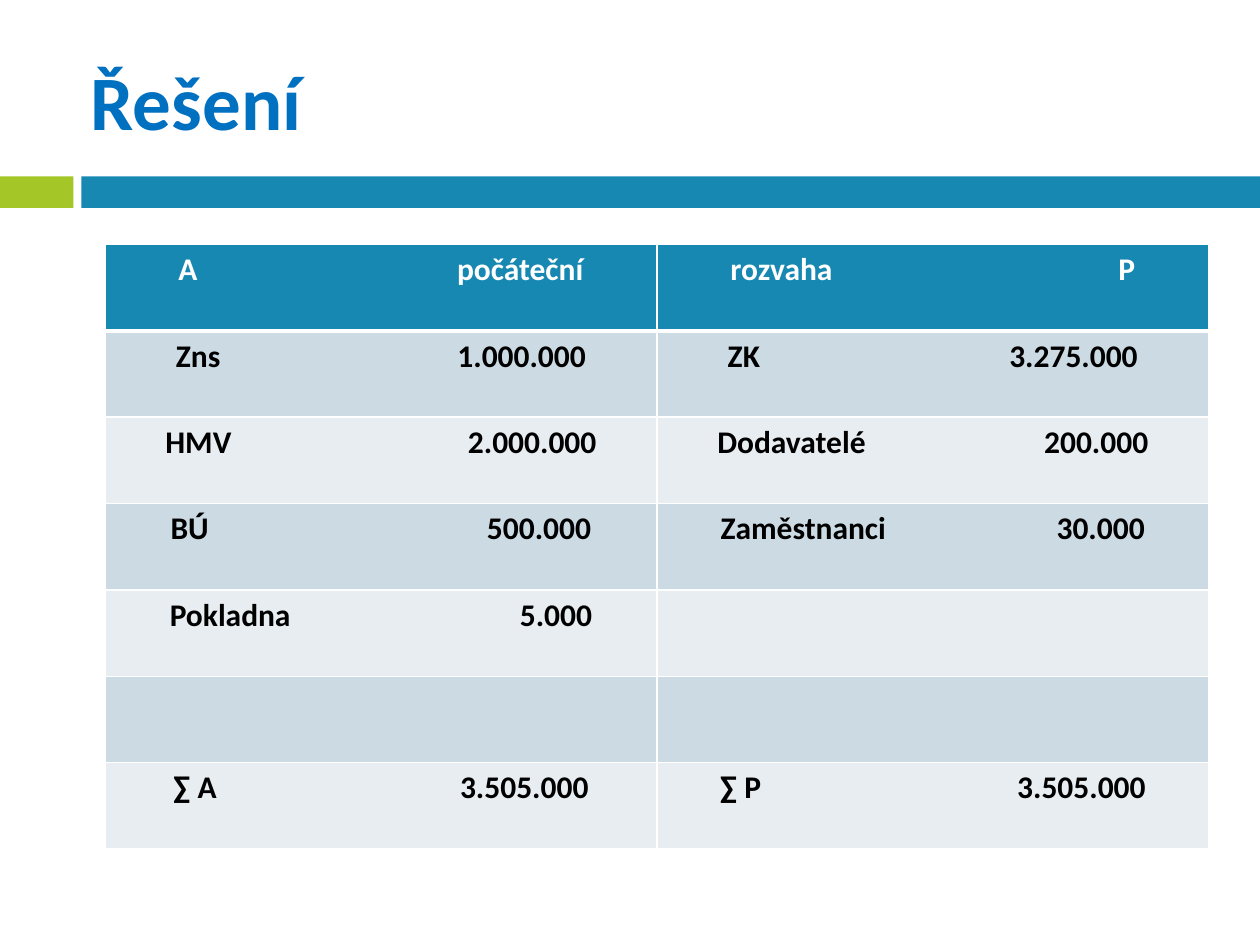
import pptx
import pptx.dml.color
import pptx.enum.shapes
import pptx.enum.text
import pptx.oxml
import pptx.oxml.ns
import pptx.util

Pt = pptx.util.Pt

COLORS = {
    "title": "0070C0",
    "green": "A4C626",
    "blue": "1688B1",
    "band_dark": "CCDAE4",
    "band_light": "E8EDF2",
    "white": "FFFFFF",
    "black": "000000",
}
FONT = "Calibri"
COLUMN_WIDTH = 315.36
TABLE_HEIGHT = 345.6

# Each cell: label, value, distance of both from the cell's sides in points
BALANCE = [
    [("A", "počáteční", 42), ("rozvaha", "P", 42)],
    [("Zns", "1.000.000", 40.5), ("ZK", "3.275.000", 40.5)],
    [("HMV", "2.000.000", 34.5), ("Dodavatelé", "200.000", 34.5)],
    [("BÚ", "500.000", 37.5), ("Zaměstnanci", "30.000", 36.5)],
    [("Pokladna", "5.000", 37), None],
    [None, None],
    [("∑ A", "3.505.000", 39), ("∑ P", "3.505.000", 36)],
]


def rgb(name):
    return pptx.dml.color.RGBColor.from_string(COLORS[name])


def write_text(text_frame, text, size=18, color="black", bold=True):
    paragraph = text_frame.paragraphs[0]
    run = paragraph.add_run()
    run.text = text
    run.font.name = FONT
    run.font.size = Pt(size)
    run.font.bold = bold
    run.font.color.rgb = rgb(color)
    return paragraph


def add_bar(slide, left, width, color):
    shape = slide.shapes.add_shape(
        pptx.enum.shapes.MSO_SHAPE.RECTANGLE, Pt(left), Pt(100.8), Pt(width), Pt(18))
    shape.shadow.inherit = False
    shape.fill.solid()
    shape.fill.fore_color.rgb = rgb(color)
    shape.line.fill.background()


def add_title(slide, text):
    box = slide.shapes.add_textbox(Pt(48.24), Pt(18), Pt(642.24), Pt(77.76))
    frame = box.text_frame
    frame.word_wrap = True
    frame.vertical_anchor = pptx.enum.text.MSO_ANCHOR.MIDDLE
    frame.margin_left = frame.margin_right = Pt(3.6)
    write_text(frame, text, size=44, color="title")


def add_right_tab(paragraph, position):
    namespace = pptx.oxml.ns.nsdecls("a")
    properties = paragraph._p.get_or_add_pPr()
    properties.append(pptx.oxml.parse_xml(
        f'<a:tabLst {namespace}><a:tab pos="{Pt(position)}" algn="r"/></a:tabLst>'))


def set_borders(cell, top=1, bottom=1):
    namespace = pptx.oxml.ns.nsdecls("a")
    properties = cell._tc.get_or_add_tcPr()
    widths = {"lnL": 1, "lnR": 1, "lnT": top, "lnB": bottom}
    for index, (side, width) in enumerate(widths.items()):
        properties.insert(index, pptx.oxml.parse_xml(
            f'<a:{side} {namespace} w="{Pt(width)}"><a:solidFill>'
            f'<a:srgbClr val="{COLORS["white"]}"/></a:solidFill></a:{side}>'))


def fill_cell(cell, entry, fill, color):
    cell.fill.solid()
    cell.fill.fore_color.rgb = rgb(fill)
    if entry:
        label, value, inset = entry
        cell.margin_left = Pt(inset)
        paragraph = write_text(cell.text_frame, f"{label}\t{value}", color=color)
        add_right_tab(paragraph, COLUMN_WIDTH - 2 * inset)


def add_balance_table(slide):
    table = slide.shapes.add_table(
        len(BALANCE), 2, Pt(60), Pt(139.68), Pt(2 * COLUMN_WIDTH), Pt(TABLE_HEIGHT)).table
    for column in table.columns:
        column.width = Pt(COLUMN_WIDTH)
    for row_index, entries in enumerate(BALANCE):
        table.rows[row_index].height = Pt(TABLE_HEIGHT / len(BALANCE))
        header = row_index == 0
        band = "band_dark" if row_index % 2 else "band_light"
        for column_index, entry in enumerate(entries):
            cell = table.cell(row_index, column_index)
            fill_cell(cell, entry, "blue" if header else band,
                      "white" if header else "black")
            set_borders(cell, top=3 if row_index == 1 else 1, bottom=3 if header else 1)


def main():
    presentation = pptx.Presentation()
    presentation.slide_width = Pt(720)
    presentation.slide_height = Pt(540)
    slide = presentation.slides.add_slide(presentation.slide_layouts[6])

    # Band below the title
    add_bar(slide, 0, 42, "green")
    add_bar(slide, 46.5, 673.5, "blue")

    # Title and opening balance sheet
    add_title(slide, "Řešení")
    add_balance_table(slide)

    presentation.save("out.pptx")


if __name__ == "__main__":
    main()
